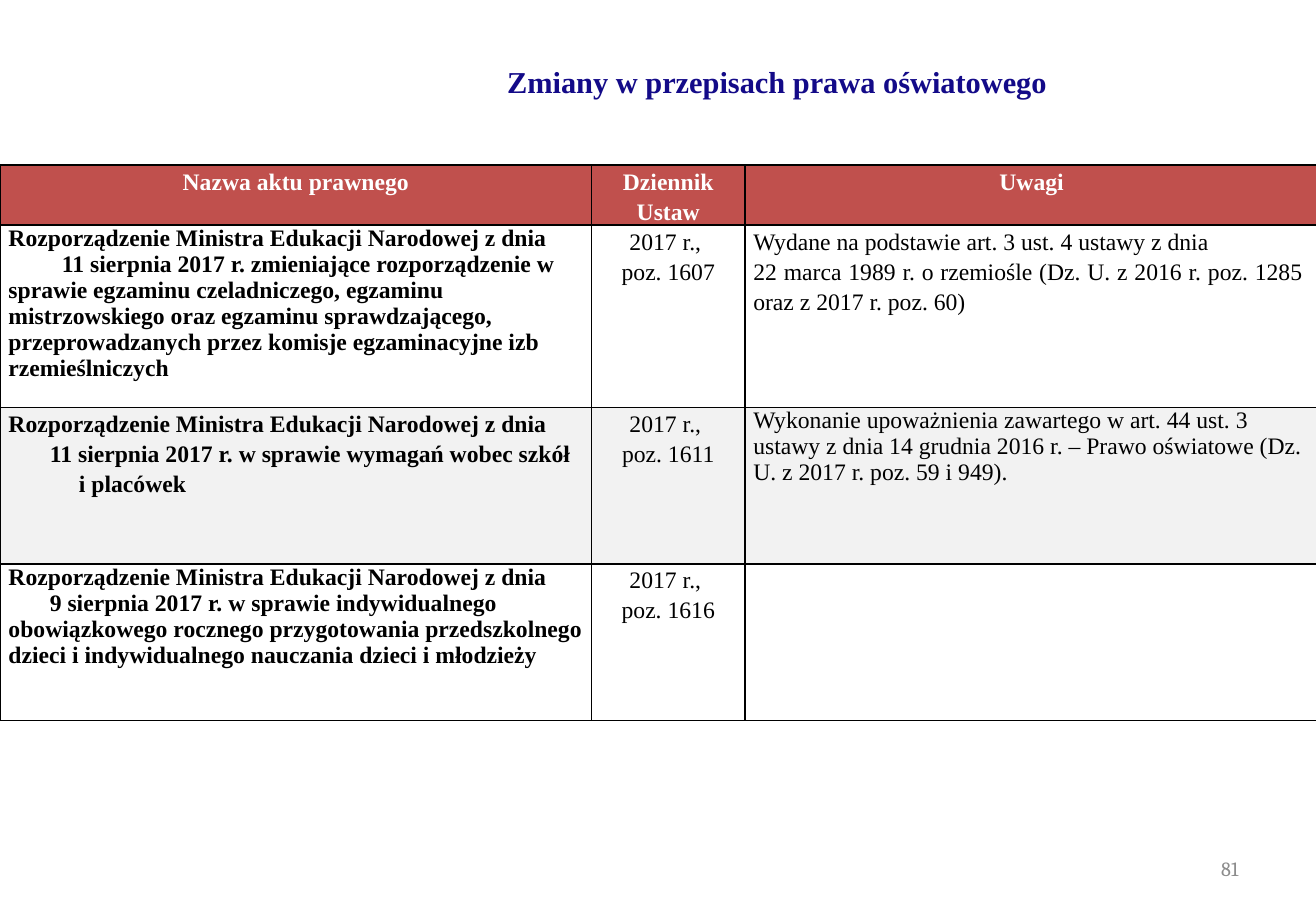
"""Build a slide with a table of changes in Polish education law."""
import pptx
import pptx.dml.color
import pptx.enum.text
import pptx.oxml
import pptx.oxml.ns
import pptx.util
from pptx.util import Inches

RGB = pptx.dml.color.RGBColor
ALIGN = pptx.enum.text.PP_ALIGN
MIDDLE = pptx.enum.text.MSO_ANCHOR.MIDDLE
NAVY = RGB(0x13, 0x0A, 0x88)
RED = RGB(0xC0, 0x50, 0x4D)
WHITE = RGB(0xFF, 0xFF, 0xFF)
PALE = RGB(0xF2, 0xF2, 0xF2)
GRAY = RGB(0x8C, 0x8C, 0x8C)
BLACK = RGB(0, 0, 0)
SERIF = "Times New Roman"

COLS = [4.87, 1.26, 4.72]
ROWS = [0.49, 1.5, 1.29, 1.29]
HEADS = ["Nazwa aktu prawnego", "Dziennik Ustaw", "Uwagi"]
START = "Rozporządzenie Ministra Edukacji Narodowej z dnia"
ACTS = [
    {"name": [(START, 0),
              ("11 sierpnia 2017 r. zmieniające rozporządzenie w sprawie egzaminu "
               "czeladniczego, egzaminu mistrzowskiego oraz egzaminu sprawdzającego, "
               "przeprowadzanych przez komisje egzaminacyjne izb rzemieślniczych", 0.44)],
     "space": 1, "item": "1607", "fill": WHITE,
     "notes": ["Wydane na podstawie art. 3 ust. 4 ustawy z dnia",
               "22 marca 1989 r. o rzemiośle (Dz. U. z 2016 r. poz. 1285 "
               "\voraz z 2017 r. poz. 60)"],
     "align": ALIGN.JUSTIFY, "gap": 1.15},
    {"name": [(START, 0),
              ("11 sierpnia 2017 r. w sprawie wymagań wobec szkół", 0.34),
              ("i placówek", 0.58)],
     "space": 1.15, "item": "1611", "fill": PALE,
     "notes": ["Wykonanie upoważnienia zawartego w art. 44 ust. 3 ustawy z dnia "
               "14 grudnia 2016 r. – Prawo oświatowe (Dz. U. z 2017 r. poz. 59 i 949)."],
     "align": ALIGN.LEFT, "gap": 1},
    {"name": [(START, 0),
              ("9 sierpnia 2017 r. w sprawie indywidualnego obowiązkowego rocznego "
               "przygotowania przedszkolnego dzieci i indywidualnego nauczania "
               "dzieci i młodzieży", 0.34)],
     "space": 1, "item": "1616", "fill": WHITE,
     "notes": [], "align": ALIGN.LEFT, "gap": 1},
]


def style(para, size, color, bold=False, align=ALIGN.LEFT, face=SERIF):
    """Set the font and alignment of a paragraph."""
    para.alignment = align
    para.font.size = pptx.util.Pt(size)
    para.font.name = face
    para.font.bold = bold
    para.font.color.rgb = color


def border(cell):
    """Draw a thin black line on each side of a cell."""
    props = cell._tc.get_or_add_tcPr()
    for side in "LRTB":
        props.append(pptx.oxml.parse_xml(
            f'<a:ln{side} {pptx.oxml.ns.nsdecls("a")} w="{pptx.util.Pt(1)}">'
            f'<a:solidFill><a:srgbClr val="{BLACK}"/></a:solidFill></a:ln{side}>'))


def write(cell, lines, fill, color=BLACK, bold=False, align=ALIGN.LEFT,
          gap=1.15, inset=0.07):
    """Fill a cell with (text, first-line indent) paragraphs."""
    border(cell)
    cell.fill.solid()
    cell.fill.fore_color.rgb = fill
    cell.margin_left = cell.margin_right = Inches(inset)
    cell.margin_top = cell.margin_bottom = 0
    cell.text_frame.text = "\n".join(text for text, _ in lines)
    for para, (_, indent) in zip(cell.text_frame.paragraphs, lines):
        if indent:
            para._p.get_or_add_pPr().set("indent", str(Inches(indent)))
        para.line_spacing = gap
        style(para, 14, color, bold, align)


def add_title(slide):
    """Place the slide title."""
    title = slide.shapes.title
    title.left, title.top = Inches(2.12), Inches(0.16)
    title.width, title.height = Inches(8.55), Inches(1.02)
    title.text_frame.text = "Zmiany w przepisach prawa oświatowego"
    title.text_frame.vertical_anchor = MIDDLE
    style(title.text_frame.paragraphs[0], 18, NAVY, True, ALIGN.CENTER)


def add_acts(slide):
    """Add the table of legal acts."""
    table = slide.shapes.add_table(
        len(ROWS), len(COLS), 0, Inches(1.36),
        Inches(sum(COLS)), Inches(sum(ROWS))).table
    for col, width in zip(table.columns, COLS):
        col.width = Inches(width)
    for row, height in zip(table.rows, ROWS):
        row.height = Inches(height)
    for col, head in enumerate(HEADS):
        write(table.cell(0, col), [(head, 0)], RED, WHITE, True,
              ALIGN.CENTER, inset=0.04)
    for row, act in enumerate(ACTS, 1):
        fill = act["fill"]
        write(table.cell(row, 0), act["name"], fill, bold=True, gap=act["space"])
        write(table.cell(row, 1), [(f"2017 r., \vpoz. {act['item']}", 0)], fill,
              align=ALIGN.CENTER)
        write(table.cell(row, 2), [(note, 0) for note in act["notes"]], fill,
              align=act["align"], gap=act["gap"])


def add_number(slide):
    """Add the page number."""
    box = slide.shapes.add_textbox(
        Inches(7.76), Inches(6.95), Inches(2.53), Inches(0.4))
    frame = box.text_frame
    frame.word_wrap = True
    frame.vertical_anchor = MIDDLE
    frame.text = "81"
    style(frame.paragraphs[0], 12, GRAY, align=ALIGN.RIGHT, face="Cambria")


def main():
    """Build and save the slide."""
    deck = pptx.Presentation()
    deck.slide_width, deck.slide_height = Inches(10.83), Inches(7.5)
    slide = deck.slides.add_slide(deck.slide_layouts[5])
    add_title(slide)
    add_acts(slide)
    add_number(slide)
    deck.save("out.pptx")


if __name__ == "__main__":
    main()
